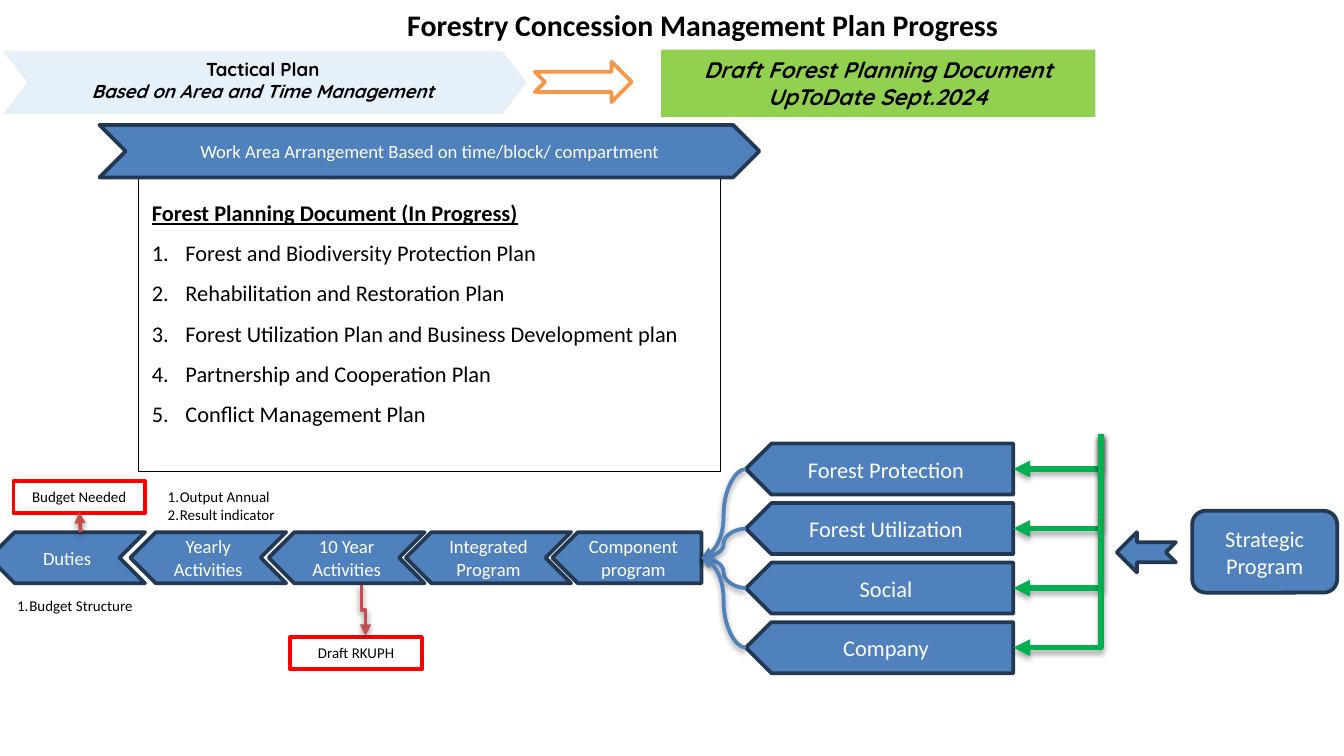
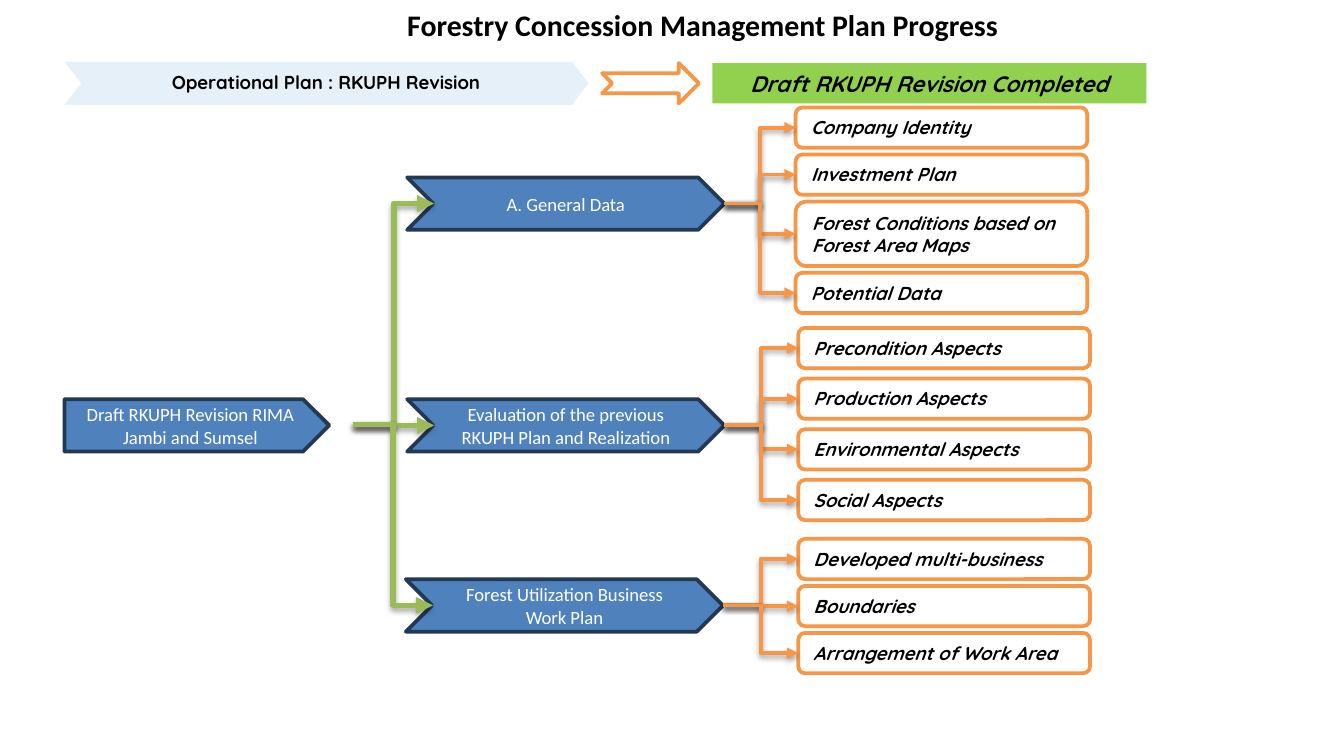
from dataclasses import dataclass, field
from typing import Any, NamedTuple, Optional

from lxml.etree import SubElement
from pptx import Presentation
from pptx.dml.color import RGBColor
from pptx.enum.shapes import MSO_CONNECTOR, MSO_SHAPE
from pptx.enum.text import MSO_ANCHOR, MSO_AUTO_SIZE, PP_ALIGN
from pptx.oxml.ns import qn
from pptx.util import Emu, Inches, Pt

SLIDE_WIDTH = Inches(10)
CELL = SLIDE_WIDTH / 100
ROWS = 56.25
COLORS = {
    "black": "000000", "white": "FFFFFF", "blue": "4F81BD", "navy": "233953",
    "pale": "DEEBF7", "lime": "92D050", "orange": "F79646", "red": "FF0000",
    "brick": "C0504D", "green": "00B050", "olive": "9BBB59",
}
TITLE = "Forestry Concession Management Plan Progress"


class Point(NamedTuple):
    """A place in grid columns and rows."""
    column: float
    row: float


class Box(NamedTuple):
    """An area in grid columns and rows."""
    left: float
    top: float
    width: float
    height: float

    @property
    def middle(self) -> float:
        """Return the row halfway down."""
        return self.top + self.height / 2

    @property
    def right(self) -> float:
        """Return the column of the right edge."""
        return self.left + self.width


@dataclass(frozen=True)
class ShapeStyle:
    """The look of a shape and of its text."""
    kind: MSO_SHAPE
    fill: Optional[str] = None
    line: Optional[str] = None
    flipped: bool = False
    text: dict[str, Any] = field(default_factory=dict)


@dataclass(frozen=True)
class LinkStyle:
    """The look of an arrow with a soft shadow."""
    color: str
    kind: MSO_CONNECTOR = MSO_CONNECTOR.ELBOW
    width: float = 2
    downward: bool = False
    preset: Optional[str] = None


@dataclass(frozen=True)
class Header:
    """The band, arrow and status under the title."""
    band: Box
    caption: Box
    captions: tuple[str, ...]
    arrow: Box
    status: Box
    status_text: str


class Step(NamedTuple):
    """One step of the activity chain."""
    text: str
    left: float
    width: float


class Branch(NamedTuple):
    """A chapter of the plan and its topics."""
    text: str
    box: Box
    topic_left: float
    topic_top: float
    gap: float
    topics: tuple[str, ...]


WHITE_TEXT = dict(color="white", align=PP_ALIGN.CENTER, anchor=MSO_ANCHOR.MIDDLE)
LARGE_TEXT = dict(WHITE_TEXT, size=12)
QUICKSAND = dict(font="Quicksand", bold=True)
CENTERED = dict(QUICKSAND, align=PP_ALIGN.CENTER)

BAND = ShapeStyle(MSO_SHAPE.CHEVRON, "pale")
HEADER_ARROW = ShapeStyle(MSO_SHAPE.NOTCHED_RIGHT_ARROW, "white", "orange")
STATUS = ShapeStyle(MSO_SHAPE.RECTANGLE, "lime", text=dict(CENTERED, size=12, italic=True))
CHEVRON = ShapeStyle(MSO_SHAPE.CHEVRON, "blue", "navy", text=WHITE_TEXT)
BACK_CHEVRON = ShapeStyle(MSO_SHAPE.CHEVRON, "blue", "navy", True, WHITE_TEXT)
PLATE = ShapeStyle(MSO_SHAPE.PENTAGON, "blue", "navy", text=WHITE_TEXT)
BACK_PLATE = ShapeStyle(MSO_SHAPE.PENTAGON, "blue", "navy", True, WHITE_TEXT)
PROGRAM = ShapeStyle(MSO_SHAPE.PENTAGON, "blue", "navy", True, LARGE_TEXT)
STRATEGY = ShapeStyle(MSO_SHAPE.ROUNDED_RECTANGLE, "blue", "navy", text=LARGE_TEXT)
BACK_ARROW = ShapeStyle(MSO_SHAPE.NOTCHED_RIGHT_ARROW, "blue", "navy", True)
NOTE = ShapeStyle(MSO_SHAPE.RECTANGLE, None, "red", text=dict(size=8, align=PP_ALIGN.CENTER))
TOPIC = ShapeStyle(MSO_SHAPE.ROUNDED_RECTANGLE, "white", "orange", text=dict(QUICKSAND, italic=True))

PROGRAM_LINK = LinkStyle("green", width=3, downward=True, preset="bentConnector2")
COMPONENT_LINK = LinkStyle("blue", MSO_CONNECTOR.CURVE)
DRAFT_LINK = LinkStyle("brick", downward=True)
BUDGET_LINK = LinkStyle("brick", MSO_CONNECTOR.STRAIGHT)
TRUNK_LINK = LinkStyle("olive", width=3)
TOPIC_LINK = LinkStyle("orange")

TACTICAL = Header(
    Box(0.2, 3.8, 39, 4.7), Box(2.9, 3.8, 33.3, 4.4),
    ("Tactical Plan", "Based on Area and Time Management"),
    Box(39.8, 4.6, 7.2, 3), Box(49.2, 3.7, 32.3, 5),
    "Draft Forest Planning Document UpToDate Sept.2024",
)
OPERATIONAL = Header(
    Box(4.8, 4.6, 39, 3.2), Box(7.6, 4.8, 33.3, 2.7),
    ("Operational Plan : RKUPH Revision",),
    Box(44.8, 4.7, 7.2, 3), Box(53, 4.7, 32.3, 3),
    "Draft RKUPH Revision Completed",
)
PLANS = """Forest and Biodiversity Protection Plan
Rehabilitation and Restoration Plan
Forest Utilization Plan and Business Development plan
Partnership and Cooperation Plan
Conflict Management Plan"""
PROGRAMS = ("Forest Protection", "Forest Utilization", "Social", "Company")
STEPS = (
    Step("Integrated Program", 30.2, 12.3),
    Step("10 Year Activities", 20, 11.6),
    Step("Yearly Activities", 9.7, 11.6),
    Step("Duties", -0.8, 11.6),
)
BRANCHES = (
    Branch("A. General Data", Box(30.3, 13.2, 23.6, 3.9), 59.2, 8, 0.5,
           ("Company Identity", "Investment Plan",
            "Forest Conditions based on Forest Area Maps", "Potential Data")),
    Branch("Evaluation of the previous RKUPH Plan and Realization",
           Box(30.3, 29.7, 23.6, 3.9), 59.4, 24.4, 0.77,
           ("Precondition Aspects", "Production Aspects",
            "Environmental Aspects", "Social Aspects")),
    Branch("Forest Utilization Business Work Plan", Box(30.2, 43.1, 23.6, 3.9), 59.4, 40.1, 0.5,
           ("Developed multi-business", "Boundaries", "Arrangement of Work Area")),
)


def cells(count: float) -> Emu:
    """Convert grid cells to a length."""
    return Emu(round(count * CELL))


def write(frame, text: str, *, size: float = 10, font: str = "Calibri", color: str = "black",
          bold: bool = False, italic: bool = False, underline: bool = False,
          align: PP_ALIGN = PP_ALIGN.LEFT, anchor: MSO_ANCHOR = MSO_ANCHOR.TOP,
          spacing: float = 1, hanging: float = 0, numbered: bool = False) -> None:
    """Add each line of the text to the frame as a formatted paragraph."""
    frame.word_wrap = True
    frame.auto_size = MSO_AUTO_SIZE.NONE
    frame.vertical_anchor = anchor
    for line in text.splitlines():
        paragraph = frame.paragraphs[0] if not frame.text else frame.add_paragraph()
        paragraph.alignment = align
        paragraph.line_spacing = spacing
        paragraph.space_before = Pt(0)
        properties = paragraph._p.get_or_add_pPr()
        properties.set("marL", str(cells(hanging)))
        properties.set("indent", str(-cells(hanging)))
        if numbered:
            SubElement(properties, qn("a:buAutoNum"), type="arabicPeriod")
        else:
            SubElement(properties, qn("a:buNone"))
        run = paragraph.add_run()
        run.text = line
        run.font.size = Pt(size)
        run.font.name = font
        run.font.bold = bold
        run.font.italic = italic
        run.font.underline = underline
        run.font.color.rgb = RGBColor.from_string(COLORS[color])


def place(shape, box: Box) -> None:
    """Move a shape to its box."""
    shape.left, shape.top, shape.width, shape.height = map(cells, box)


def draw_shape(shapes, box: Box, style: ShapeStyle, text: str = ""):
    """Draw a styled preset shape with its text."""
    shape = shapes.add_shape(style.kind, *map(cells, box))
    shape.shadow.inherit = False
    if style.fill:
        shape.fill.solid()
        shape.fill.fore_color.rgb = RGBColor.from_string(COLORS[style.fill])
    else:
        shape.fill.background()
    if style.line:
        shape.line.color.rgb = RGBColor.from_string(COLORS[style.line])
        shape.line.width = Pt(2)
    else:
        shape.line.fill.background()
    if style.flipped:
        shape.element.spPr.find(qn("a:xfrm")).set("flipH", "1")
    if text:
        write(shape.text_frame, text, **style.text)
    return shape


def draw_text(shapes, box: Box, text: str, **text_format: Any):
    """Draw a text box."""
    text_box = shapes.add_textbox(*map(cells, box))
    write(text_box.text_frame, text, **text_format)
    return text_box


def draw_link(slide, start: Point, end: Point, style: LinkStyle) -> None:
    """Draw an arrow, turned a quarter when it leaves downward."""
    corners = (*start, *end)
    leftward = end.column < start.column
    if style.downward:
        column, row = (start.column + end.column) / 2, (start.row + end.row) / 2
        drop = (end.row - start.row) / 2 * (1 if leftward else -1)
        side = abs(end.column - start.column) / 2
        corners = (column - drop, row - side, column + drop, row + side)
    connector = slide.shapes.add_connector(style.kind, *map(cells, corners))
    properties = connector.element.spPr
    if style.downward:
        properties.find(qn("a:xfrm")).set("rot", "5400000" if leftward else "16200000")
    if style.preset:
        properties.find(qn("a:prstGeom")).set("prst", style.preset)
    connector.line.color.rgb = RGBColor.from_string(COLORS[style.color])
    connector.line.width = Pt(style.width)
    SubElement(properties.find(qn("a:ln")), qn("a:tailEnd"), type="triangle")
    thick = style.width > 2
    shadow = SubElement(SubElement(properties, qn("a:effectLst")), qn("a:outerShdw"),
                        blurRad="40000", dist="23000" if thick else "20000",
                        dir="5400000", rotWithShape="0")
    color = SubElement(shadow, qn("a:srgbClr"), val=COLORS["black"])
    SubElement(color, qn("a:alpha"), val="35000" if thick else "38000")


def draw_header(slide, header: Header) -> None:
    """Fill the title and draw the row below it."""
    place(slide.shapes.title, Box(29.3, 0, 52.5, 3.7))
    write(slide.shapes.title.text_frame, TITLE, size=16, bold=True)
    group = slide.shapes.add_group_shape()
    band = draw_shape(group.shapes, header.band, BAND)
    band.adjustments[0] = 0.39
    fill_color = band.element.spPr.find(qn("a:solidFill")).find(qn("a:srgbClr"))
    SubElement(fill_color, qn("a:alpha"), val="75000")
    caption = draw_text(group.shapes, header.caption, header.captions[0], **CENTERED)
    for line in header.captions[1:]:
        write(caption.text_frame, line, italic=True, **CENTERED)
    draw_shape(slide.shapes, header.arrow, HEADER_ARROW)
    draw_shape(slide.shapes, header.status, STATUS, header.status_text)


def draw_tactical_slide(presentation) -> None:
    """Build the slide on the tactical plan."""
    slide = presentation.slides.add_slide(presentation.slide_layouts[1])
    shapes = slide.shapes
    draw_header(slide, TACTICAL)
    draw_shape(shapes, Box(7.4, 9.3, 49.1, 3.9), CHEVRON,
               "Work Area Arrangement Based on time/block/ compartment")
    plan_list = slide.placeholders[1]
    place(plan_list, Box(10.3, 13.3, 43.3, 21.8))
    plan_list.line.color.rgb = RGBColor.from_string(COLORS["black"])
    plan_list.line.width = Pt(0.75)
    write(plan_list.text_frame, "Forest Planning Document (In Progress)",
          size=12, bold=True, underline=True, spacing=1.5)
    write(plan_list.text_frame, PLANS, size=12, spacing=1.5, hanging=2.5, numbered=True)

    programs = [Box(55.5, 33 + 4.43 * index, 19.9, 3.8) for index in range(len(PROGRAMS))]
    for text, box in zip(PROGRAMS, programs):
        draw_shape(shapes, box, PROGRAM, text)
        draw_link(slide, Point(81.9, 32.3), Point(box.right, box.middle), PROGRAM_LINK)
    draw_shape(shapes, Box(88.7, 38, 10.8, 6.1), STRATEGY, "Strategic Program")
    draw_shape(shapes, Box(83.1, 39.6, 4.4, 3), BACK_ARROW)
    component = Box(41.1, 39.6, 11.1, 3.8)
    draw_shape(shapes, component, BACK_PLATE, "Component program")
    for box in programs:
        draw_link(slide, Point(box.left, box.middle),
                  Point(component.right, component.middle), COMPONENT_LINK)
    for step in STEPS:
        draw_shape(shapes, Box(step.left, component.top, step.width, component.height),
                   BACK_CHEVRON, step.text)

    small_list = dict(size=8, hanging=0.9, numbered=True)
    draw_text(shapes, Box(11.5, 35.8, 13, 3.7), "Output Annual\nResult indicator", **small_list)
    draw_text(shapes, Box(0.3, 43.9, 12.3, 2.4), "Budget Structure", **small_list)
    draw_shape(shapes, Box(21.6, 47.4, 9.8, 2.4), NOTE, "Draft RKUPH")
    draw_link(slide, Point(26.9, 43.5), Point(27.2, 47.3), DRAFT_LINK)
    draw_shape(shapes, Box(1, 35.8, 9.8, 2.4), NOTE, "Budget Needed")
    draw_link(slide, Point(6, 39.6), Point(5.9, 38.1), BUDGET_LINK)


def draw_operational_slide(presentation) -> None:
    """Build the slide on the operational plan."""
    slide = presentation.slides.add_slide(presentation.slide_layouts[5])
    draw_header(slide, OPERATIONAL)
    draw_shape(slide.shapes, Box(4.8, 29.7, 19.7, 3.9), PLATE,
               "Draft RKUPH Revision RIMA Jambi and Sumsel")
    for branch in BRANCHES:
        draw_shape(slide.shapes, branch.box, CHEVRON, branch.text)
        top = branch.topic_top
        for text in branch.topics:
            topic = Box(branch.topic_left, top, 21.7, 4.8 if len(text) > 25 else 3)
            draw_shape(slide.shapes, topic, TOPIC, text)
            draw_link(slide, Point(branch.box.right, branch.box.middle),
                      Point(topic.left, topic.middle), TOPIC_LINK)
            top += topic.height + branch.gap
        draw_link(slide, Point(26.3, 31.6), Point(branch.box.left + 2, branch.box.middle),
                  TRUNK_LINK)


def main() -> None:
    """Build and save the presentation."""
    presentation = Presentation()
    presentation.slide_width = SLIDE_WIDTH
    presentation.slide_height = cells(ROWS)
    draw_tactical_slide(presentation)
    draw_operational_slide(presentation)
    presentation.save("out.pptx")


if __name__ == "__main__":
    main()
